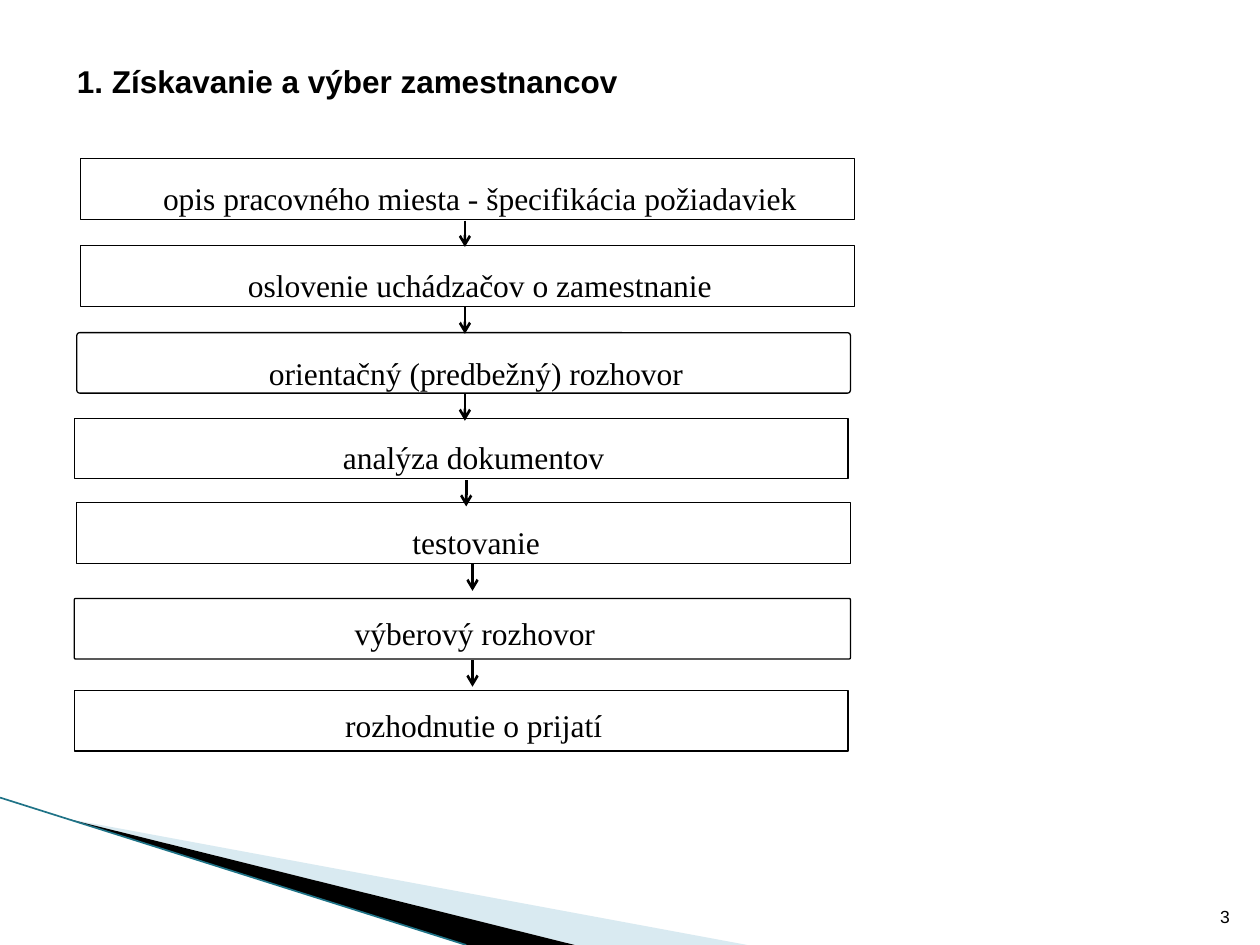
from dataclasses import dataclass

from lxml import etree
from pptx import Presentation
from pptx.dml.color import RGBColor
from pptx.enum.shapes import MSO_CONNECTOR, MSO_SHAPE
from pptx.enum.text import MSO_ANCHOR, MSO_AUTO_SIZE, PP_ALIGN
from pptx.oxml.ns import qn
from pptx.util import Inches, Pt

LINE = MSO_CONNECTOR.STRAIGHT
ROUNDED = MSO_SHAPE.ROUNDED_RECTANGLE
TOP, BOTTOM = MSO_ANCHOR.TOP, MSO_ANCHOR.BOTTOM
LEFT, CENTER, RIGHT = PP_ALIGN.LEFT, PP_ALIGN.CENTER, PP_ALIGN.RIGHT
NO_AUTOFIT = MSO_AUTO_SIZE.NONE
TITLE_ONLY = 5


@dataclass(frozen=True)
class Theme:
    ink: RGBColor = RGBColor(0, 0, 0)
    paper: RGBColor = RGBColor(255, 255, 255)
    pale: RGBColor = RGBColor(0xA0, 0xCB, 0xDC)
    teal: RGBColor = RGBColor(0x1F, 0x73, 0x87)
    heading_font: str = "Arial"
    body_font: str = "Times New Roman"
    text_size: int = 18
    number_size: int = 10


THEME = Theme()
STEP_HEIGHT = 0.48
ARROW_LENGTH = 0.21
# text, left, top, width, corner rounding, space above text
STEPS = [
    ("opis pracovného miesta - špecifikácia požiadaviek", 0.64, 1.26, 6.14, 0, 0.1),
    ("oslovenie uchádzačov o zamestnanie", 0.64, 1.95, 6.14, 0, 0.1),
    ("orientačný (predbežný) rozhovor", 0.61, 2.64, 6.14, 0.05, 0.1),
    ("analýza dokumentov", 0.59, 3.32, 6.14, 0, 0.1),
    ("testovanie", 0.61, 3.99, 6.14, 0, 0.1),
    ("výberový rozhovor", 0.59, 4.75, 6.16, 0.02, 0.06),
    ("rozhodnutie o prijatí", 0.59, 5.48, 6.14, 0, 0.06),
]
ARROW_X = [3.69, 3.69, 3.69, 3.7, 3.75, 3.75]


def place(sp, left, top, width, height):
    sp.left, sp.top = Inches(left), Inches(top)
    sp.width, sp.height = Inches(width), Inches(height)


def write(tf, text, font, size, align, anchor, bold=False):
    tf.word_wrap = True
    tf.auto_size = NO_AUTOFIT
    tf.vertical_anchor = anchor
    p = tf.paragraphs[0]
    p.alignment = align
    r = p.add_run()
    r.text = text
    r.font.name, r.font.size, r.font.bold = font, Pt(size), bold
    r.font.color.rgb = THEME.ink
    return p


def add_line(s, start, end, color, width):
    line = s.shapes.add_connector(LINE, *(Inches(v) for v in (*start, *end)))
    line.line.color.rgb = color
    line.line.width = Pt(width)
    etree.SubElement(line._element.spPr, qn("a:effectLst"))
    return line


def add_wedge(s, points, color, opacity=100):
    start, *rest = [(Inches(x), Inches(y)) for x, y in points]
    builder = s.shapes.build_freeform(*start)
    builder.add_line_segments(rest)
    sp = builder.convert_to_shape()
    sp.shadow.inherit = False
    sp.fill.solid()
    sp.fill.fore_color.rgb = color
    sp.line.fill.background()
    if opacity < 100:
        clr = sp._element.spPr.find(".//" + qn("a:srgbClr"))
        etree.SubElement(clr, qn("a:alpha"), val=str(opacity * 1000))


def add_corner_decoration(s, left, top, width, height):
    right, bottom = left + width, top + height
    tip = (left + 0.54, top + 0.17)
    add_wedge(s, [tip, (right, bottom), (4.56, bottom)], THEME.pale, 40)
    add_wedge(s, [tip, (4.56, bottom), (3.7, bottom)], THEME.ink)
    add_line(s, (left, top), (3.7, bottom), THEME.teal, 0.95)


def add_title(s, left, top, width, height):
    sp = s.shapes.title
    place(sp, left, top, width, height)
    write(sp.text_frame, "1. Získavanie a výber zamestnancov", THEME.heading_font,
          THEME.text_size, LEFT, TOP, bold=True)


def add_slide_number(s, left, top, width, height):
    sp = s.shapes.add_textbox(0, 0, 0, 0)
    place(sp, left, top, width, height)
    write(sp.text_frame, "3", THEME.heading_font, THEME.number_size, RIGHT, BOTTOM)


def add_step(s, text, left, top, width, rounding, inset):
    sp = s.shapes.add_shape(ROUNDED, 0, 0, 0, 0)
    place(sp, left, top, width, STEP_HEIGHT)
    sp.adjustments[0] = rounding
    sp.shadow.inherit = False
    sp.fill.solid()
    sp.fill.fore_color.rgb = THEME.paper
    sp.line.color.rgb = THEME.ink
    sp.line.width = Pt(0.75)
    tf = sp.text_frame
    tf.margin_top, tf.margin_bottom = Inches(inset), 0
    p = write(tf, text, THEME.body_font, THEME.text_size, CENTER, TOP)
    p.line_spacing = 1.2
    pPr = p._p.get_or_add_pPr()
    pPr.set("marL", str(Inches(0.25)))
    pPr.set("indent", str(Inches(-0.05)))


def add_arrow(s, x, top):
    arrow = add_line(s, (x, top), (x, top + ARROW_LENGTH), THEME.ink, 1.5)
    etree.SubElement(arrow.line._get_or_add_ln(), qn("a:tailEnd"), type="arrow")


def add_flow(s):
    for step in STEPS:
        add_step(s, *step)
    for x, (_, _, top, *_) in zip(ARROW_X, STEPS):
        add_arrow(s, x, top + STEP_HEIGHT + 0.01)


def main():
    prs = Presentation()
    prs.slide_width, prs.slide_height = Inches(10), Inches(7.5)
    s = prs.slides.add_slide(prs.slide_layouts[TITLE_ONLY])
    add_corner_decoration(s, 0, 6.33, 5.93, 1.17)
    add_title(s, 0.51, 0.44, 7.09, 0.6)
    add_flow(s)
    add_slide_number(s, 9.46, 7.01, 0.4, 0.4)
    prs.save("out.pptx")


if __name__ == "__main__":
    main()
